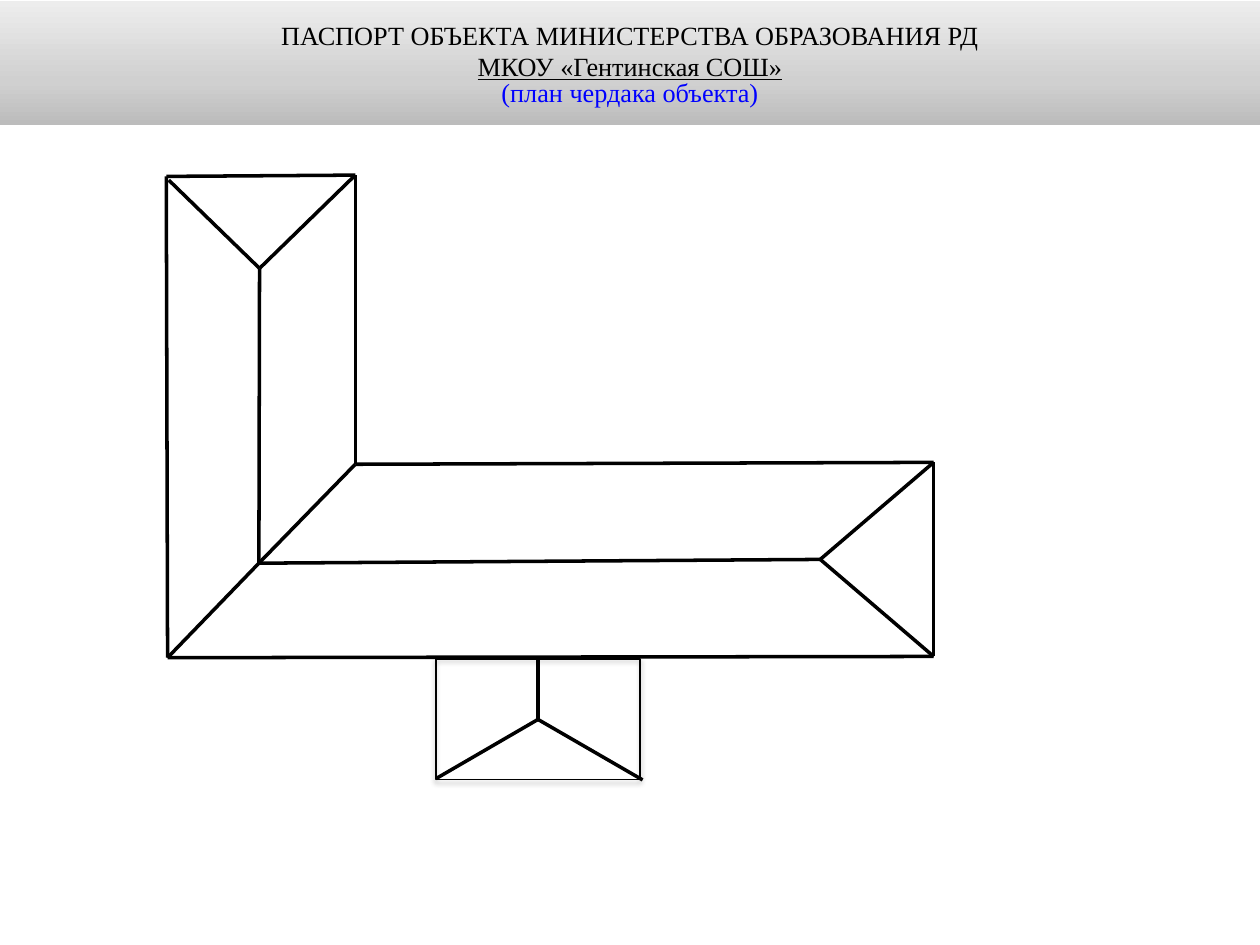
from copy import deepcopy
from dataclasses import dataclass

from lxml.etree import SubElement
from pptx import Presentation
from pptx.dml.color import RGBColor
from pptx.enum.shapes import MSO_CONNECTOR as Connector, MSO_SHAPE as Preset
from pptx.enum.text import MSO_ANCHOR as Anchor, PP_ALIGN as Align
from pptx.oxml.ns import qn
from pptx.util import Inches, Pt

COLUMNS, ROWS = 1000, 750
FONT = "Times New Roman"
BLACK, BLUE = "000000", "0000FF"


@dataclass(frozen=True)
class Point:
    column: float
    row: float


@dataclass(frozen=True)
class Edge:
    start: Point
    end: Point


@dataclass(frozen=True)
class Heading:
    text: str
    color: str = BLACK
    underline: bool = False
    spacing: float = 1.0


@dataclass(frozen=True)
class Stop:
    position: int
    color: str


NORTH_WEST, NORTH_EAST = Point(132, 140), Point(282, 139)
SOUTH_WEST, SOUTH_EAST = Point(133, 522), Point(741, 521)
INNER_CORNER, EAST_CORNER = Point(282, 368.5), Point(741, 367)
NORTH_PEAK, VALLEY, EAST_PEAK = Point(206, 213), Point(205.5, 447), Point(651, 444)
PORCH_PEAK, PORCH_TOP = Point(427, 571), Point(427, 523.5)

WALLS = [
    Edge(SOUTH_WEST, NORTH_WEST),
    Edge(NORTH_WEST, NORTH_EAST),
    Edge(INNER_CORNER, NORTH_EAST),
    Edge(EAST_CORNER, INNER_CORNER),
    Edge(EAST_CORNER, SOUTH_EAST),
    Edge(SOUTH_EAST, SOUTH_WEST),
]
ROOF = [
    Edge(EAST_PEAK, VALLEY),
    Edge(SOUTH_EAST, EAST_PEAK),
    Edge(EAST_CORNER, EAST_PEAK),
    Edge(VALLEY, SOUTH_WEST),
    Edge(VALLEY, INNER_CORNER),
    Edge(VALLEY, NORTH_PEAK),
    Edge(NORTH_PEAK, Point(134, 143)),
    Edge(NORTH_PEAK, NORTH_EAST),
    Edge(Point(510, 619), PORCH_PEAK),
    Edge(Point(346, 618), PORCH_PEAK),
]
HEADINGS = [
    Heading("ПАСПОРТ ОБЪЕКТА МИНИСТЕРСТВА ОБРАЗОВАНИЯ РД"),
    Heading("МКОУ «Гентинская СОШ»", underline=True),
    Heading("(план чердака объекта)", BLUE, spacing=0.8),
]
BANNER_STOPS = [Stop(0, "BCBCBC"), Stop(35, "D0D0D0"), Stop(100, "EDEDED")]

presentation = Presentation()
presentation.slide_width, presentation.slide_height = Inches(10), Inches(7.5)
slide = presentation.slides.add_slide(presentation.slide_layouts[6])


def rgb(color: str) -> RGBColor:
    return RGBColor.from_string(color)


def x(column: float) -> int:
    return round(presentation.slide_width * column / COLUMNS)


def y(row: float) -> int:
    return round(presentation.slide_height * row / ROWS)


def add_rectangle(corner: Point, width: float, height: float):
    shape = slide.shapes.add_shape(
        Preset.RECTANGLE, x(corner.column), y(corner.row), x(width), y(height))
    shape.shadow.inherit = False
    return shape


def style_line(line) -> None:
    line.color.rgb = rgb(BLACK)
    line.width = Pt(0)


def draw_edge(edge: Edge):
    connector = slide.shapes.add_connector(
        Connector.STRAIGHT, x(edge.start.column), y(edge.start.row),
        x(edge.end.column), y(edge.end.row))
    style_line(connector.line)
    SubElement(connector.element.spPr, qn("a:effectLst"))
    return connector


def draw_porch():
    shape = add_rectangle(Point(379, 490), 96, 162)
    shape.rotation = 90
    shape.fill.background()
    style_line(shape.line)
    effects = shape.element.spPr.find(qn("a:effectLst"))
    shadow = SubElement(
        effects, qn("a:outerShdw"), blurRad=str(Pt(3.1)), dist=str(Pt(1.6)),
        dir="5400000", rotWithShape="0")
    color = SubElement(shadow, qn("a:srgbClr"), val=BLACK)
    SubElement(color, qn("a:alpha"), val="38000")
    return shape


def fill_gradient(shape, stops: list[Stop]) -> None:
    shape.fill.gradient()
    shape.fill.gradient_angle = 90
    stop_list = shape.element.spPr.find(qn("a:gradFill")).find(qn("a:gsLst"))
    stop_list.append(deepcopy(stop_list[0]))
    for target, stop in zip(shape.fill.gradient_stops, stops):
        target.position = stop.position / 100
        target.color.rgb = rgb(stop.color)


def draw_banner(headings: list[Heading]) -> None:
    shape = add_rectangle(Point(0, 1), COLUMNS, 98)
    fill_gradient(shape, BANNER_STOPS)
    shape.line.fill.background()
    text_frame = shape.text_frame
    text_frame.word_wrap = True
    text_frame.vertical_anchor = Anchor.MIDDLE
    text_frame.text = "\n".join(heading.text for heading in headings)
    for paragraph, heading in zip(text_frame.paragraphs, headings):
        paragraph.alignment = Align.CENTER
        paragraph.line_spacing = heading.spacing
        font = paragraph.runs[0].font
        font.name, font.size = FONT, Pt(15)
        font.underline = heading.underline
        font.color.rgb = rgb(heading.color)


def main() -> None:
    porch = draw_porch()
    for edge in ROOF:
        draw_edge(edge)
    draw_banner(HEADINGS)
    for edge in WALLS:
        draw_edge(edge)
    porch_ridge = draw_edge(Edge(PORCH_PEAK, PORCH_TOP))
    porch_ridge.end_connect(porch, 1)
    porch_ridge.end_x, porch_ridge.end_y = x(PORCH_TOP.column), y(PORCH_TOP.row)
    presentation.save("out.pptx")


if __name__ == "__main__":
    main()
